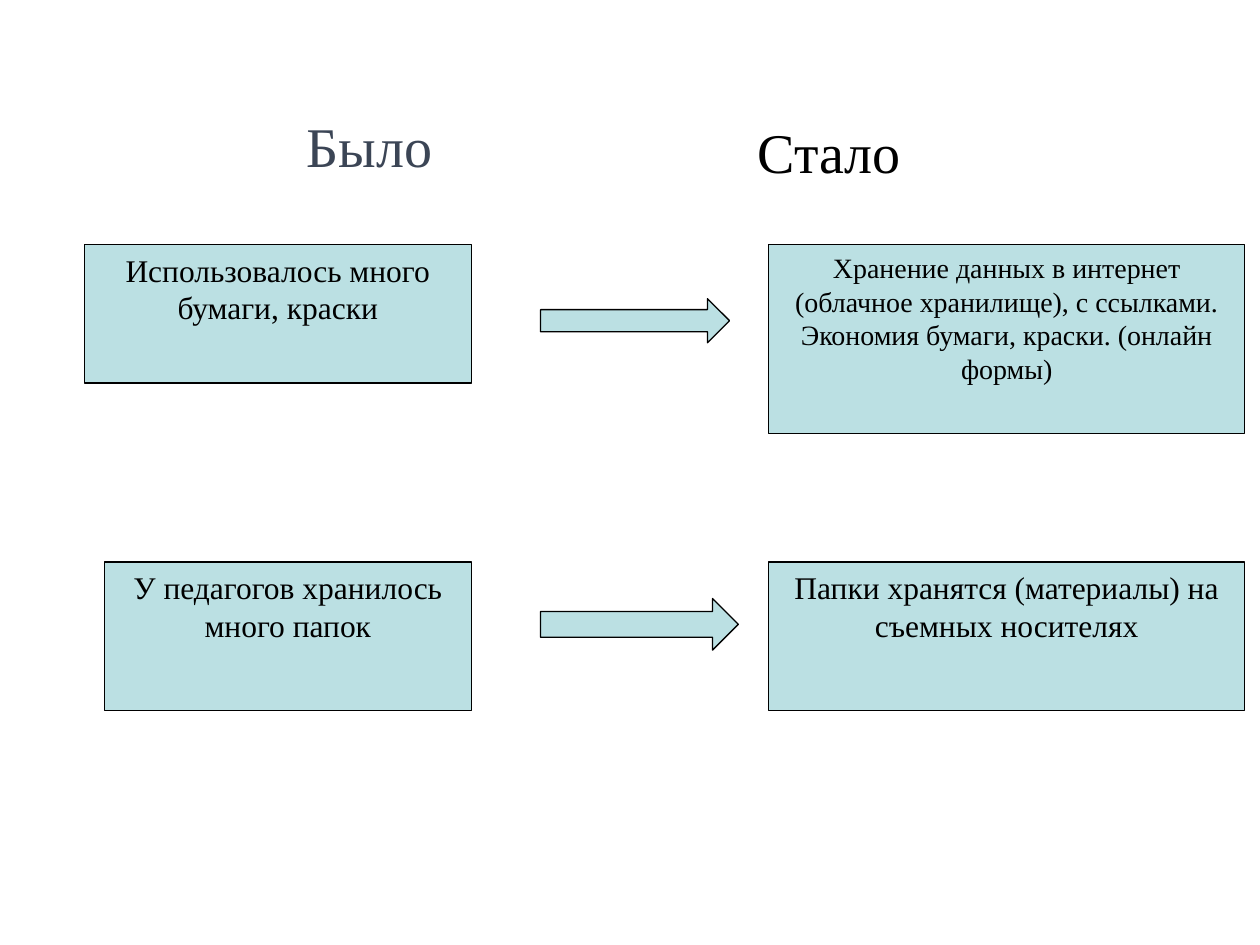
from dataclasses import dataclass

from pptx import Presentation
from pptx.dml.color import RGBColor
from pptx.enum.shapes import MSO_SHAPE
from pptx.enum.text import MSO_ANCHOR, MSO_AUTO_SIZE, PP_ALIGN
from pptx.util import Inches, Pt


@dataclass(frozen=True)
class Theme:
    font: str = "Times New Roman"
    ink: str = "000000"
    title: str = "3B4555"
    fill: str = "BBE0E3"
    line: float = 0.75
    heading_size: int = 32
    body_size: int = 18
    small_size: int = 16


THEME = Theme()
ROWS = [
    {
        "before": ((0.67, 1.94, 3.07, 1.1), "Использовалось много бумаги, краски", THEME.body_size),
        "arrow": (4.29, 2.37, 1.5, 0.35),
        "after": (
            (6.1, 1.94, 3.78, 1.5),
            "Хранение данных в интернет (облачное хранилище), с ссылками.\n"
            "Экономия бумаги, краски. (онлайн формы)",
            THEME.small_size,
        ),
    },
    {
        "before": ((0.83, 4.46, 2.91, 1.18), "У педагогов хранилось много папок", THEME.body_size),
        "arrow": (4.29, 4.75, 1.57, 0.41),
        "after": (
            (6.1, 4.46, 3.78, 1.18),
            "Папки хранятся (материалы) на съемных носителях",
            THEME.body_size,
        ),
    },
]


def to_inches(box):
    return [Inches(v) for v in box]


def write(tf, text, size, color, anchor, wrap=True):
    tf.text = text
    tf.word_wrap = wrap
    tf.vertical_anchor = anchor
    for p in tf.paragraphs:
        p.alignment = PP_ALIGN.CENTER
        for r in p.runs:
            r.font.name = THEME.font
            r.font.size = Pt(size)
            r.font.color.rgb = RGBColor.from_string(color)


def add_heading(sp, box, text, color, wrap):
    sp.left, sp.top, sp.width, sp.height = to_inches(box)
    write(sp.text_frame, text, THEME.heading_size, color, MSO_ANCHOR.MIDDLE, wrap)
    sp.text_frame.auto_size = MSO_AUTO_SIZE.SHAPE_TO_FIT_TEXT


def add_block(s, kind, box):
    sp = s.shapes.add_shape(kind, *to_inches(box))
    sp.shadow.inherit = False
    sp.fill.solid()
    sp.fill.fore_color.rgb = RGBColor.from_string(THEME.fill)
    sp.line.color.rgb = RGBColor.from_string(THEME.ink)
    sp.line.width = Pt(THEME.line)
    return sp


def add_card(s, box, text, size):
    sp = add_block(s, MSO_SHAPE.RECTANGLE, box)
    write(sp.text_frame, text, size, THEME.ink, MSO_ANCHOR.TOP)


def add_row(s, row):
    add_card(s, *row["before"])
    add_block(s, MSO_SHAPE.RIGHT_ARROW, row["arrow"])
    add_card(s, *row["after"])


def main():
    prs = Presentation()
    prs.slide_width, prs.slide_height = Inches(10), Inches(7.5)
    s = prs.slides.add_slide(prs.slide_layouts[5])
    add_heading(s.shapes.title, (2.33, 0.83, 1.21, 0.64), "Было", THEME.title, False)
    box = (4.86, 0.88, 3.44, 0.64)
    add_heading(s.shapes.add_textbox(*to_inches(box)), box, "Стало", THEME.ink, True)
    for row in ROWS:
        add_row(s, row)
    prs.save("out.pptx")


if __name__ == "__main__":
    main()
